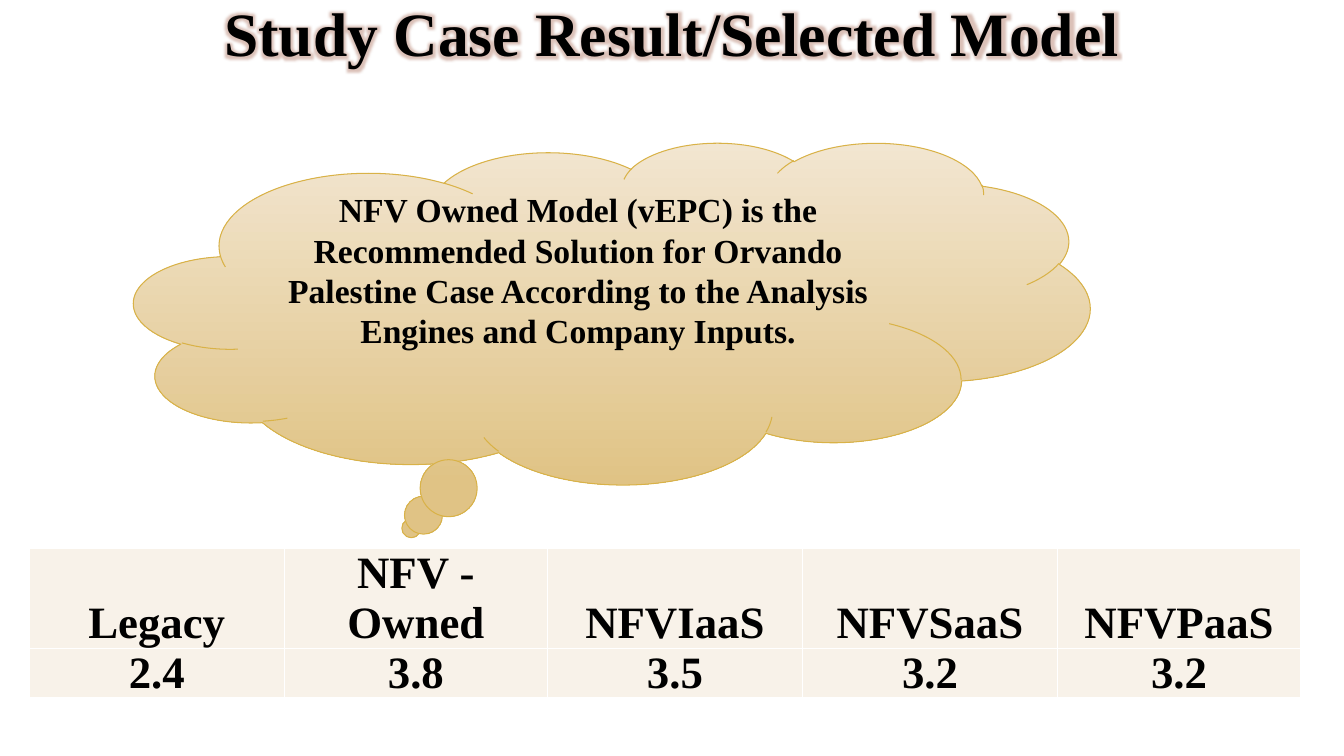
from lxml.etree import SubElement
from pptx import Presentation
from pptx.dml.color import RGBColor
from pptx.enum.shapes import MSO_SHAPE as Preset
from pptx.enum.text import MSO_ANCHOR as Anchor, PP_ALIGN as Align
from pptx.oxml import parse_xml
from pptx.oxml.ns import nsdecls, qn
from pptx.util import Inches, Pt

TITLE = "Study Case Result/Selected Model"
MESSAGE = ("NFV Owned Model (vEPC) is the Recommended Solution for Orvando "
           "Palestine Case According to the Analysis Engines and Company Inputs.")
SCORES = [
    ("Legacy", "2.4"),
    ("NFV - Owned", "3.8"),
    ("NFVIaaS", "3.5"),
    ("NFVSaaS", "3.2"),
    ("NFVPaaS", "3.2"),
]
COLUMN_WIDTHS = (2.53, 2.61, 2.53, 2.53, 2.41)
ROW_HEIGHTS = (0.99, 0.49)

THEME = {
    "font": "Times New Roman",
    "ink": "000000", "white": "FFFFFF", "cell": "F8F2E9",
    "cloud_top": "F2E6D1", "cloud_bottom": "E0C385", "cloud_line": "D9B247",
    "glow": "A5644E",
    "title": 44, "message": 24, "score": 32,
}


def color(name):
    return RGBColor.from_string(THEME[name])


def write(frame, text, size):
    """Put one bold centred paragraph in the frame and return its run."""
    frame.word_wrap = True
    para = frame.paragraphs[0]
    para.alignment = Align.CENTER
    span = para.add_run()
    span.text = text
    formats = {"name": THEME["font"], "size": Pt(THEME[size]), "bold": True}
    for key, value in formats.items():
        setattr(span.font, key, value)
    span.font.color.rgb = color("ink")
    return span


def add_table(page):
    table = page.shapes.add_table(
        len(ROW_HEIGHTS), len(SCORES), Inches(0.29), Inches(5.44),
        Inches(sum(COLUMN_WIDTHS)), Inches(sum(ROW_HEIGHTS))).table
    for column, width in zip(table.columns, COLUMN_WIDTHS):
        column.width = Inches(width)
    for row, height in zip(table.rows, ROW_HEIGHTS):
        row.height = Inches(height)
    for column, entry in enumerate(SCORES):
        for row, text in enumerate(entry):
            cell = table.cell(row, column)
            for side in ("left", "right", "top", "bottom"):
                setattr(cell, f"margin_{side}", 0)
            cell.vertical_anchor = Anchor.BOTTOM
            write(cell.text_frame, text, "score")
            add_borders(cell)
            cell.fill.solid()
            cell.fill.fore_color.rgb = color("cell")


def add_borders(cell):
    properties = cell._tc.get_or_add_tcPr()
    for side in ("lnL", "lnR", "lnT", "lnB"):
        border = SubElement(properties, qn(f"a:{side}"), w=str(Pt(1)))
        fill = SubElement(border, qn("a:solidFill"))
        SubElement(fill, qn("a:srgbClr"), val=THEME["white"])


def add_cloud(page):
    cloud = page.shapes.add_shape(Preset.CLOUD_CALLOUT, Inches(1.33),
                                  Inches(1.41), Inches(9.48), Inches(3.39))
    cloud.shadow.inherit = False
    cloud.adjustments[0] = -0.21
    cloud.adjustments[1] = 0.63
    cloud.fill.gradient()
    cloud.fill.gradient_angle = 270
    for stop, name, position in zip(cloud.fill.gradient_stops,
                                    ("cloud_top", "cloud_bottom"), (0, 1)):
        stop.color.rgb = color(name)
        stop.position = position
    cloud.line.color.rgb = color("cloud_line")
    cloud.line.width = Pt(0.75)
    frame = cloud.text_frame
    frame.vertical_anchor = Anchor.MIDDLE
    frame.margin_bottom = Inches(0.75)
    write(frame, MESSAGE, "message")


def add_title(page):
    box = page.shapes.add_textbox(0, Inches(-0.1), Inches(13.33), Inches(0.84))
    span = write(box.text_frame, TITLE, "title")
    properties = span.font._element
    properties.insert(0, parse_xml(
        f'<a:ln {nsdecls("a")} w="{Pt(0.75)}"><a:solidFill>'
        f'<a:srgbClr val="{THEME["white"]}"/></a:solidFill></a:ln>'))
    properties.find(qn("a:solidFill")).addnext(parse_xml(
        f'<a:effectLst {nsdecls("a")}><a:glow rad="{Pt(8)}">'
        f'<a:srgbClr val="{THEME["glow"]}"><a:alpha val="40000"/></a:srgbClr>'
        f'</a:glow></a:effectLst>'))


def main():
    deck = Presentation()
    deck.slide_width, deck.slide_height = Inches(13.33), Inches(7.5)
    page = deck.slides.add_slide(deck.slide_layouts[6])
    add_table(page)
    add_cloud(page)
    add_title(page)
    deck.save("out.pptx")


if __name__ == "__main__":
    main()
